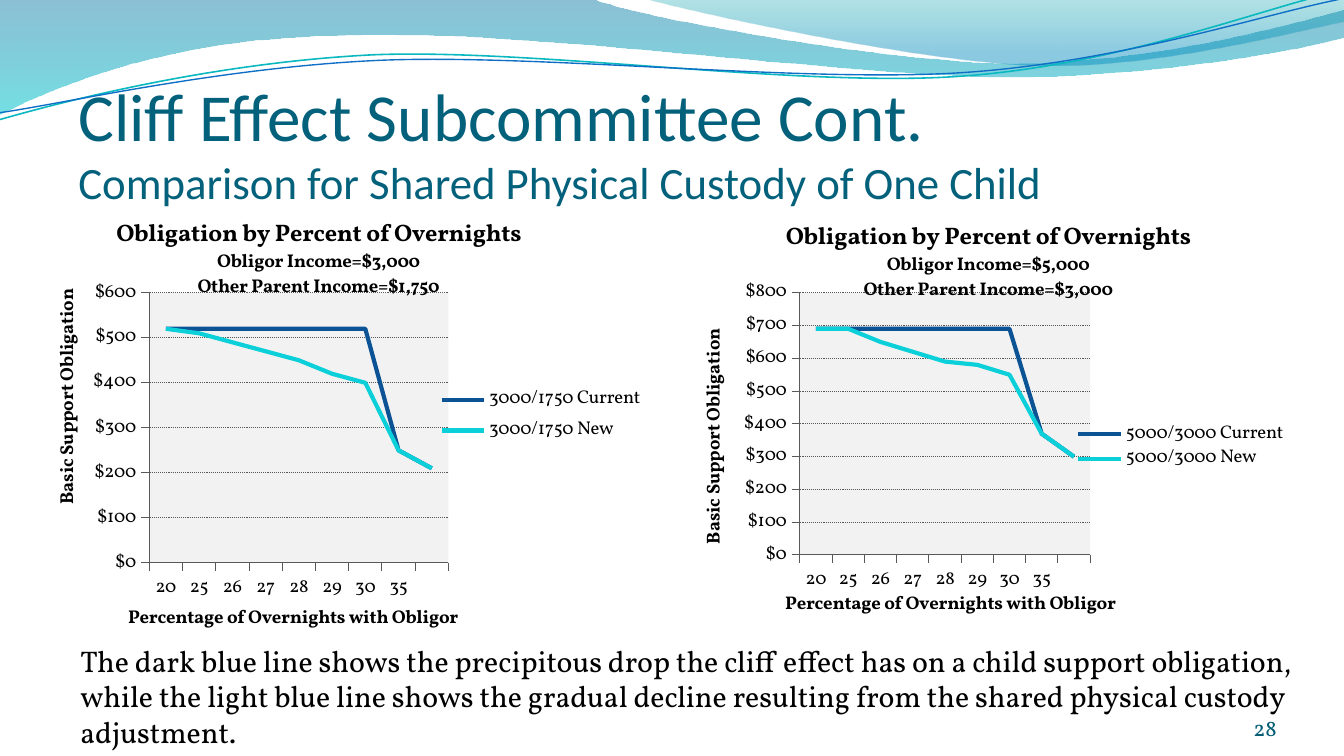
from dataclasses import dataclass

from lxml.etree import SubElement
from pptx import Presentation
from pptx.chart.data import CategoryChartData
from pptx.dml.color import RGBColor
from pptx.enum.chart import XL_CHART_TYPE, XL_LEGEND_POSITION, XL_TICK_MARK
from pptx.enum.dml import MSO_LINE
from pptx.enum.text import MSO_ANCHOR, MSO_AUTO_SIZE, PP_ALIGN
from pptx.oxml import parse_xml
from pptx.oxml.ns import nsdecls, qn
from pptx.util import Cm, Pt


@dataclass(frozen=True)
class Theme:
    heading_font: str = "Calibri"
    body_font: str = "Vollkorn"
    heading: str = "04617B"
    number: str = "045D75"
    text: str = "000000"
    plot: str = "F2F2F2"
    axis: str = "595959"
    current: str = "0B5394"
    new: str = "0BD0D9"
    title_size: int = 36
    subtitle_size: int = 24
    body_size: int = 16
    number_size: int = 12
    chart_title_size: int = 13
    chart_size: int = 10


theme = Theme()


def add_run(p, text, font, size, color, bold=False):
    r = p.add_run()
    r.text = text
    r.font.name = font
    r.font.size = Pt(size)
    r.font.bold = bold
    r.font.color.rgb = RGBColor.from_string(color)


def set_layout(parent, x, y, w=None, h=None):
    """Place a chart part by fractions of the chart's width and height."""
    for old in parent.findall(qn("c:layout")):
        parent.remove(old)
    inner = '<c:layoutTarget val="inner"/>' if parent.tag == qn("c:plotArea") else ""
    size = "" if w is None else f'<c:w val="{w}"/><c:h val="{h}"/>'
    layout = parse_xml(
        f'<c:layout {nsdecls("c")}><c:manualLayout>{inner}'
        '<c:xMode val="edge"/><c:yMode val="edge"/>'
        f'<c:x val="{x}"/><c:y val="{y}"/>{size}</c:manualLayout></c:layout>')
    parent.insert(1 if parent.xpath("c:tx|c:legendPos") else 0, layout)


prs = Presentation()
prs.slide_width, prs.slide_height = Cm(25.4), Cm(14.29)
s = prs.slides.add_slide(prs.slide_layouts[6])

# Header waves, in cm: a pair is a straight step, six numbers are a cubic curve.
# Gradient stops are position, colour, opacity in percent.
waves = [
    dict(path=[(0, 0), (11.18, -0.03), (12.09, 0.33, 16.87, 1.19, 19.25, 1.19),
               (21.67, 1.19, 24.33, 0.48, 25.4, 0.18), (25.43, 0.69),
               (24.97, 0.84, 22.1, 1.45, 18.95, 1.45),
               (15.8, 1.42, 9.7, 0.53, 6.53, 0.66),
               (3.28, 0.69, 1.17, 1.57, -0.03, 2.16), (0, 0)],
         stops=[(0, "0074A1", 45), (1, "00C6CF", 55)]),
    dict(path=[(12.17, -0.03), (12.93, 0.2, 17.32, 1.17, 19.53, 1.24),
               (21.74, 1.32, 24.41, 0.61, 25.4, 0.41), (25.4, 0), (12.17, -0.03)],
         stops=[(0, "00A1A9", 30), (0.8, "008BBF", 45)]),
    dict(path=[(-0.04, 1.66), (1.19, 1.37, 4.02, 0.78, 7.05, 0.77),
               (10.07, 0.79, 15.01, 1.76, 18.06, 1.7),
               (21.14, 1.64, 23.88, 0.68, 25.4, 0.42)],
         line=("0AB8BF", 0.85)),
    dict(path=[(-0.04, 1.53), (1.16, 1.42, 4.17, 0.87, 7.2, 0.88),
               (10.25, 0.9, 15.14, 1.69, 18.19, 1.63),
               (21.22, 1.57, 23.96, 0.78, 25.44, 0.57)],
         line=("0F6FC6", 0.75)),
]
for wave in waves:
    start, *steps = wave["path"]
    builder = s.shapes.build_freeform(Cm(start[0]), Cm(start[1]))
    builder.add_line_segments([(Cm(step[-2]), Cm(step[-1])) for step in steps],
                              close="stops" in wave)
    sp = builder.convert_to_shape()
    sp.shadow.inherit = False
    # Turn the straight steps that have control points into curves
    for segment, step in zip(sp._element.xpath(".//a:lnTo"), steps):
        if len(step) == 6:
            segment.tag = qn("a:cubicBezTo")
            end = segment[0]
            for x, y in (step[:2], step[2:4]):
                control = SubElement(segment, qn("a:pt"))
                control.set("x", str(Cm(x) - sp.left))
                control.set("y", str(Cm(y) - sp.top))
            segment.append(end)
    if "line" in wave:
        color, width = wave["line"]
        sp.rotation = 357.3
        sp.fill.background()
        sp.line.color.rgb = RGBColor.from_string(color)
        sp.line.width = Pt(width)
        continue
    sp.line.fill.background()
    sp.fill.gradient()
    sp.fill.gradient_angle = 270
    for stop, (position, color, _) in zip(sp.fill.gradient_stops, wave["stops"]):
        stop.position = position
        stop.color.rgb = RGBColor.from_string(color)
    for clr, (_, _, opacity) in zip(sp._element.xpath(".//a:gs/a:srgbClr"), wave["stops"]):
        SubElement(clr, qn("a:alpha")).set("val", str(opacity * 1000))

# Text: box, insets, anchor, alignment, fit, runs (a new run starts a new line)
texts = [
    ((1.48, 2.73, 22.86, 1.22), (0, 0.13, 0, 0), MSO_ANCHOR.BOTTOM, PP_ALIGN.LEFT,
     MSO_AUTO_SIZE.NONE,
     [("Cliff Effect Subcommittee Cont.",
       theme.heading_font, theme.title_size, theme.heading),
      ("Comparison for Shared Physical Custody of One Child",
       theme.heading_font, theme.subtitle_size, theme.heading)]),
    ((22.02, 13.24, 2.11, 0.76), (0, 0, 0, 0), MSO_ANCHOR.BOTTOM, PP_ALIGN.RIGHT,
     MSO_AUTO_SIZE.NONE,
     [("28", theme.body_font, theme.number_size, theme.number)]),
    ((1.27, 12.01, 23.5, 2.31), (0.25, 0.13, 0.25, 0.13), MSO_ANCHOR.TOP, PP_ALIGN.LEFT,
     MSO_AUTO_SIZE.SHAPE_TO_FIT_TEXT,
     [("The dark blue line shows the precipitous drop the cliff effect has on a child "
       "support obligation, while the light blue line shows the gradual decline "
       "resulting from the shared physical custody adjustment.",
       theme.body_font, theme.body_size, theme.text)]),
]
for box, insets, anchor, align, fit, runs in texts:
    tf = s.shapes.add_textbox(*map(Cm, box)).text_frame
    tf.word_wrap = True
    tf.auto_size = fit
    tf.margin_left, tf.margin_top, tf.margin_right, tf.margin_bottom = map(Cm, insets)
    tf.vertical_anchor = anchor
    p = tf.paragraphs[0]
    p.alignment = align
    for i, run in enumerate(runs):
        if i:
            p.add_line_break()
        add_run(p, *run)

# Charts: layouts are fractions of the chart's own size
charts = [
    dict(box=(0.84, 3.94, 11.66, 8.1), incomes=("$3,000", "$1,750"), name="3000/1750",
         top=600, current=[520] * 7 + [250, 210],
         new=[520, 510, 490, 470, 450, 420, 400, 250, 210],
         plot=(0.17, 0.2, 0.485, 0.64), legend=(0.63, 0.41, 0.35, 0.16),
         titles=[(0.11, 0.01), (0.13, 0.93), (0.01, 0.19)]),
    dict(box=(13.06, 4.01, 11.43, 7.77), incomes=("$5,000", "$3,000"), name="5000/3000",
         top=800, current=[690] * 7 + [370, 300],
         new=[690, 690, 650, 620, 590, 580, 550, 370, 300],
         plot=(0.18, 0.2, 0.48, 0.65), legend=(0.63, 0.52, 0.36, 0.12),
         titles=[(0.15, 0.01), (0.15, 0.93), (0.01, 0.29)]),
]
for panel in charts:
    data = CategoryChartData(number_format='"$"#,##0')
    data.categories = ["20", "25", "26", "27", "28", "29", "30", "35"]
    data.add_series(f"{panel['name']} Current", panel["current"])
    data.add_series(f"{panel['name']} New", panel["new"])
    chart = s.shapes.add_chart(XL_CHART_TYPE.LINE, *map(Cm, panel["box"]), data).chart
    chart.font.name = theme.body_font
    chart.font.size = Pt(theme.chart_size)
    chart.font.color.rgb = RGBColor.from_string(theme.text)

    obligor, other = panel["incomes"]
    small = theme.chart_size
    headings = [
        (chart.chart_title, [("Obligation by Percent of Overnights", theme.chart_title_size),
                             (f"Obligor Income={obligor}", small),
                             (f"Other Parent Income={other}", small)]),
        (chart.category_axis.axis_title, [("Percentage of Overnights with Obligor", small)]),
        (chart.value_axis.axis_title, [("Basic Support Obligation", small)]),
    ]
    for heading, lines in headings:
        tf = heading.text_frame
        for i, (text, size) in enumerate(lines):
            p = tf.add_paragraph() if i else tf.paragraphs[0]
            add_run(p, text, theme.body_font, size, theme.text, bold=True)

    for axis in (chart.category_axis, chart.value_axis):
        axis.major_tick_mark = XL_TICK_MARK.OUTSIDE
        axis.format.line.color.rgb = RGBColor.from_string(theme.axis)
        axis.format.line.width = Pt(0.5)
    axis = chart.value_axis
    axis.minimum_scale, axis.maximum_scale, axis.major_unit = 0, panel["top"], 100
    axis.tick_labels.number_format = '"$"#,##0'
    axis.tick_labels.number_format_is_linked = False
    grid = axis.major_gridlines.format.line
    grid.color.rgb = RGBColor.from_string(theme.axis)
    grid.width = Pt(0.5)
    grid.dash_style = MSO_LINE.ROUND_DOT

    chart.plots[0].vary_by_categories = False
    for series, color in zip(chart.plots[0].series, (theme.current, theme.new)):
        series.smooth = False
        series.format.line.color.rgb = RGBColor.from_string(color)
        series.format.line.width = Pt(2.25)

    chart.has_legend = True
    chart.legend.position = XL_LEGEND_POSITION.RIGHT
    chart.legend.include_in_layout = False
    root = chart._chartSpace
    plot_area = root.xpath(".//c:plotArea")[0]
    plot_area.append(parse_xml(
        f'<c:spPr {nsdecls("c", "a")}><a:solidFill><a:srgbClr val="{theme.plot}"/>'
        '</a:solidFill></c:spPr>'))
    set_layout(plot_area, *panel["plot"])
    set_layout(root.xpath(".//c:legend")[0], *panel["legend"])
    for title, place in zip(root.xpath(".//c:title"), panel["titles"]):
        set_layout(title, *place)

prs.save("out.pptx")
